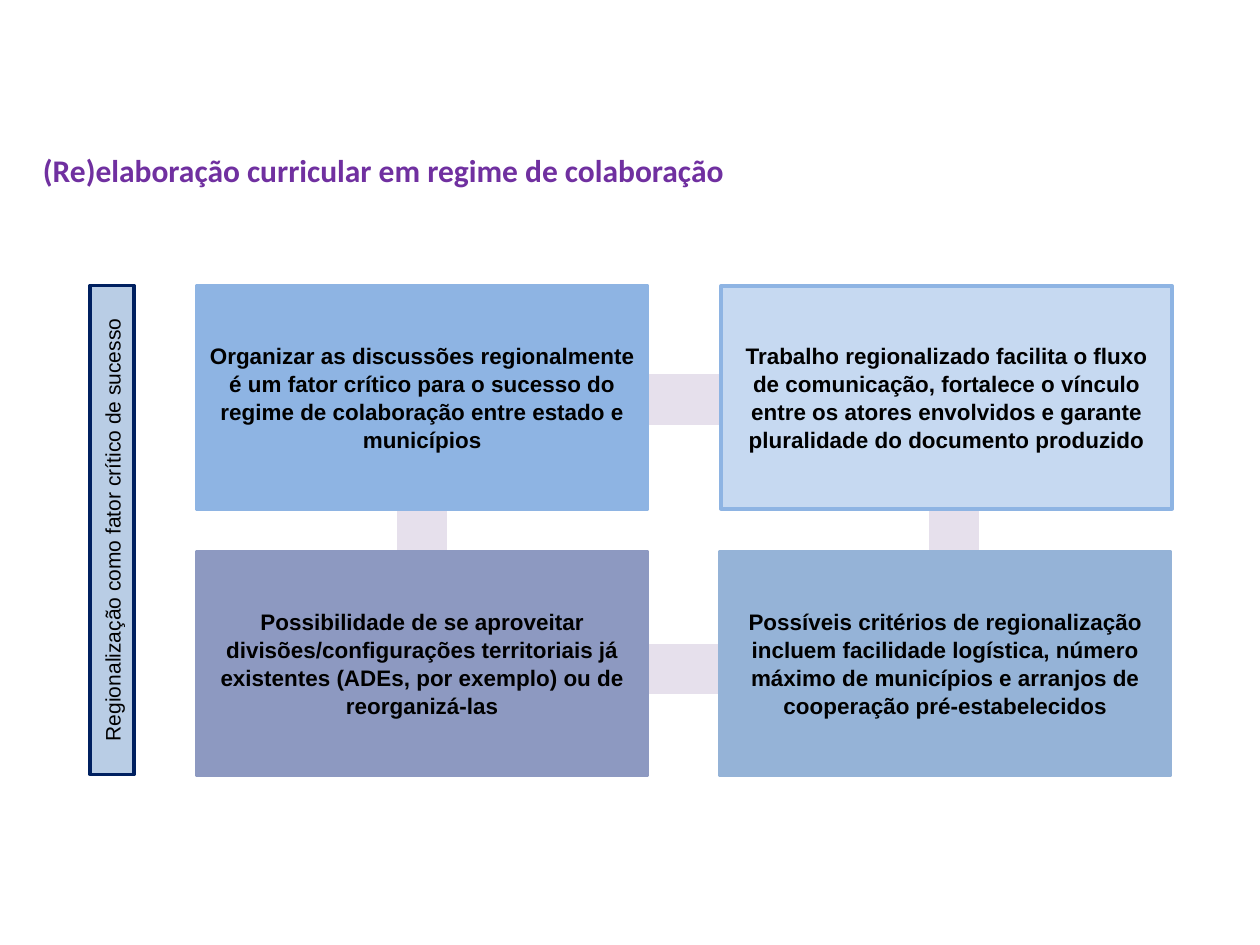
import pptx
import pptx.util
import pptx.dml.color
import pptx.enum.shapes
import pptx.enum.text

Pt = pptx.util.Pt
RGBColor = pptx.dml.color.RGBColor
ANCHOR = pptx.enum.text.MSO_ANCHOR
ALIGN = pptx.enum.text.PP_ALIGN

WHITE = RGBColor(0xFF, 0xFF, 0xFF)
BLACK = RGBColor(0x00, 0x00, 0x00)
PURPLE = RGBColor(0x70, 0x30, 0xA0)
LILAC = RGBColor(0xE6, 0xE0, 0xEC)
NAVY = RGBColor(0x00, 0x20, 0x60)
PALE_STEEL = RGBColor(0xB9, 0xCD, 0xE5)
SKY = RGBColor(0x8E, 0xB4, 0xE3)
PALE_SKY = RGBColor(0xC6, 0xD9, 0xF1)
SLATE = RGBColor(0x8D, 0x99, 0xC1)
STEEL = RGBColor(0x95, 0xB3, 0xD7)

presentation = pptx.Presentation()
presentation.slide_width, presentation.slide_height = Pt(720), Pt(540)
slide = presentation.slides.add_slide(presentation.slide_layouts[5])


def add_box(left, top, width, height, fill, line, line_width):
    box = slide.shapes.add_shape(
        pptx.enum.shapes.MSO_SHAPE.RECTANGLE,
        Pt(left), Pt(top), Pt(width), Pt(height))
    box.shadow.inherit = False
    box.fill.solid()
    box.fill.fore_color.rgb = fill
    box.line.color.rgb = line
    box.line.width = Pt(line_width)
    return box


def write(shape, text, size, font, color, bold, align, anchor):
    frame = shape.text_frame
    frame.word_wrap = True
    frame.vertical_anchor = anchor
    paragraph = frame.paragraphs[0]
    paragraph.alignment = align
    run = paragraph.add_run()
    run.text = text
    run.font.size = Pt(size)
    run.font.name = font
    run.font.bold = bold
    run.font.color.rgb = color
    return paragraph


# Title
title = slide.shapes.title
title.left, title.top, title.width, title.height = Pt(17.3), Pt(82.8), Pt(670.3), Pt(29)
write(title, "(Re)elaboração curricular em regime de colaboração",
      18, "Calibri", PURPLE, True, ALIGN.LEFT, ANCHOR.TOP)

# Thick frame that links the four cards
add_box(241.2, 228.3, 303.8, 154, WHITE, LILAC, 28.75)

# Vertical side label
side_label = add_box(-75.6, 290.2, 279.4, 25.2, PALE_STEEL, NAVY, 2)
side_label.rotation = 270
write(side_label, "Regionalização como fator crítico de sucesso",
      12, "Arial", BLACK, False, ALIGN.CENTER, ANCHOR.MIDDLE)

# Cards: left, top, fill, line, text
TOP_ROW, BOTTOM_ROW = 163.4, 315.4
cards = [
    (112.3, TOP_ROW, SKY, SKY,
     "Organizar as discussões regionalmente é um fator crítico para o sucesso "
     "do regime de colaboração entre estado e municípios"),
    (112.3, BOTTOM_ROW, SLATE, SLATE,
     "Possibilidade de se aproveitar divisões/configurações territoriais já "
     "existentes (ADEs, por exemplo) ou de reorganizá-las"),
    (412, TOP_ROW, PALE_SKY, SKY,
     "Trabalho regionalizado facilita o fluxo de comunicação, fortalece o vínculo "
     "entre os atores envolvidos e garante pluralidade do documento produzido"),
    (411.2, BOTTOM_ROW, STEEL, STEEL,
     "Possíveis critérios de regionalização incluem facilidade logística, número "
     "máximo de municípios e arranjos de cooperação pré-estabelecidos"),
]
for left, top, fill, line, text in cards:
    card = add_box(left, top, 257.8, 127.4, fill, line, 2)
    card_paragraph = write(card, text, 12.8, "Arial", BLACK, True,
                           ALIGN.CENTER, ANCHOR.MIDDLE)
    card_paragraph.line_spacing = 1.04

presentation.save("out.pptx")
